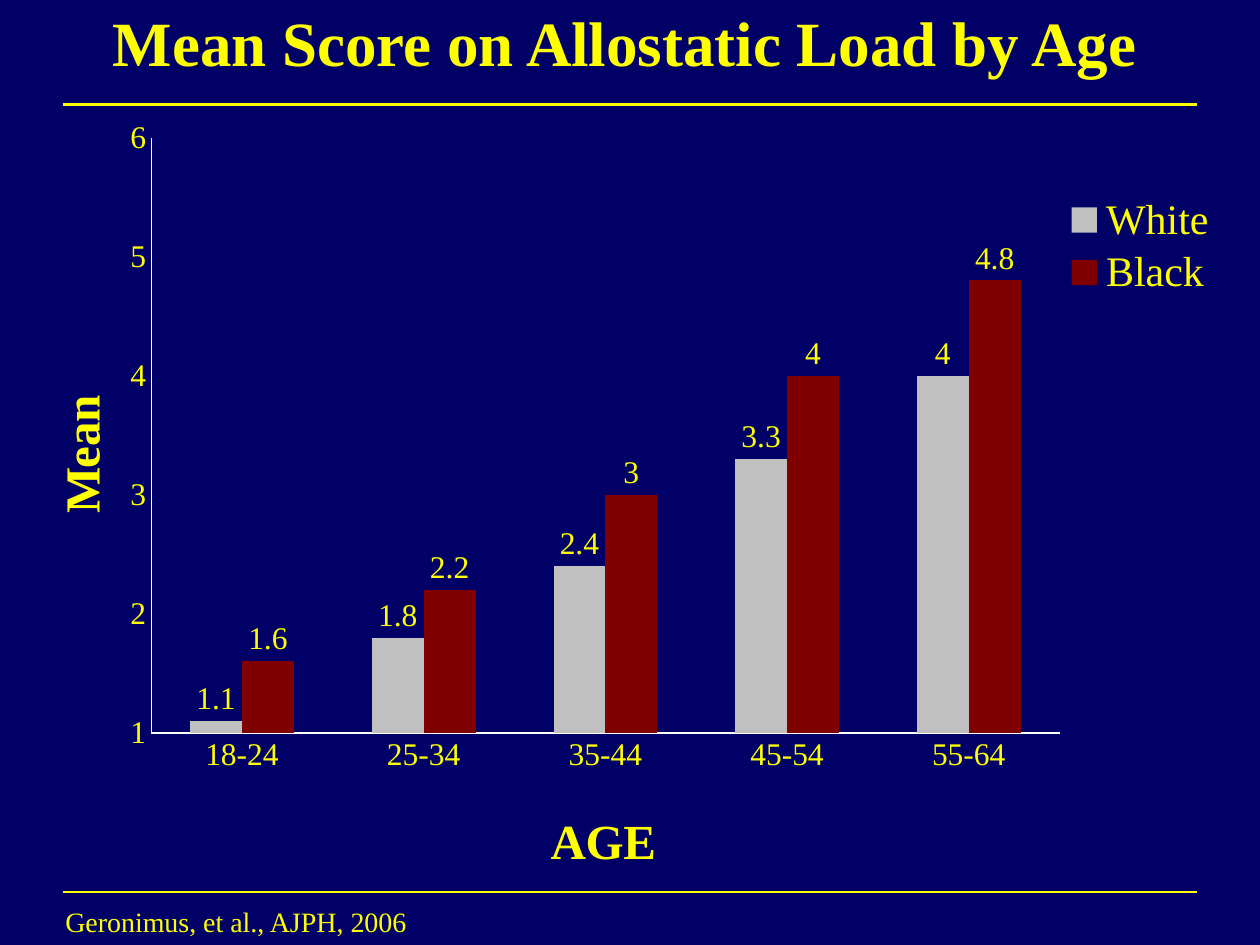
from dataclasses import dataclass

from lxml.etree import SubElement
from pptx import Presentation
from pptx.chart.data import CategoryChartData
from pptx.dml.color import RGBColor as Rgb
from pptx.enum.chart import XL_CHART_TYPE as ChartType
from pptx.enum.chart import XL_LABEL_POSITION as LabelPos
from pptx.enum.chart import XL_LEGEND_POSITION as LegendPos
from pptx.enum.chart import XL_TICK_MARK as Tick
from pptx.enum.shapes import MSO_CONNECTOR as Connector
from pptx.enum.text import MSO_ANCHOR as Anchor
from pptx.enum.text import MSO_AUTO_SIZE as AutoSize
from pptx.enum.text import PP_ALIGN as Align
from pptx.oxml import parse_xml
from pptx.oxml.ns import nsdecls, qn
from pptx.util import Inches, Pt


@dataclass(frozen=True)
class Theme:
    """Colours, font and type sizes of the slide."""
    font: str = "Times New Roman"
    background: str = "000066"
    accent: str = "FFFF00"
    axis: str = "FFFFFF"
    white_bars: str = "C0C0C0"
    black_bars: str = "800000"
    title: int = 36
    axis_title: int = 28
    legend: int = 24
    label: int = 18
    source: int = 16


def apply(target, values):
    """Set every attribute named in values on the target."""
    for name, value in values.items():
        setattr(target, name, value)


def place(part, after, **fractions):
    """Give a chart part a manual layout in fractions of the chart."""
    for old in part.findall(qn("c:layout")):
        part.remove(old)
    layout = parse_xml(f"<c:layout {nsdecls('c')}/>")
    manual = SubElement(layout, qn("c:manualLayout"))
    if after is None:
        SubElement(manual, qn("c:layoutTarget")).set("val", "inner")
        part.insert(0, layout)
    else:
        part.find(qn(after)).addnext(layout)
    for edge in ("x", "y"):
        SubElement(manual, qn(f"c:{edge}Mode")).set("val", "edge")
    for name, value in fractions.items():
        SubElement(manual, qn(f"c:{name}")).set("val", str(value))


class SlideBuilder:
    """Holds the theme and the current slide."""

    def __init__(self, slide, theme):
        self.slide = slide
        self.theme = theme
        fill = slide.background.fill
        fill.solid()
        fill.fore_color.rgb = Rgb.from_string(theme.background)

    def style(self, font, size, bold=False):
        apply(font, {"name": self.theme.font, "size": Pt(size), "bold": bold})
        font.color.rgb = Rgb.from_string(self.theme.accent)

    def title(self, text, left, top, width, height):
        heading = self.slide.shapes.title
        apply(heading, {"left": Inches(left), "top": Inches(top),
                        "width": Inches(width), "height": Inches(height)})
        frame = heading.text_frame
        apply(frame, {"text": text, "vertical_anchor": Anchor.MIDDLE,
                      "word_wrap": True, "auto_size": AutoSize.NONE})
        paragraph = frame.paragraphs[0]
        apply(paragraph, {"alignment": Align.CENTER, "line_spacing": Pt(25),
                          "space_before": Pt(0)})
        self.style(paragraph.runs[0].font, self.theme.title, True)

    def source(self, text, left, top, width, height):
        box = self.slide.shapes.add_textbox(
            Inches(left), Inches(top), Inches(width), Inches(height))
        apply(box.text_frame, {"text": text, "word_wrap": True,
                               "auto_size": AutoSize.SHAPE_TO_FIT_TEXT})
        self.style(box.text_frame.paragraphs[0].runs[0].font, self.theme.source)

    def rule(self, left, right, y, weight):
        line = self.slide.shapes.add_connector(
            Connector.STRAIGHT, Inches(left), Inches(y), Inches(right), Inches(y))
        line.line.color.rgb = Rgb.from_string(self.theme.accent)
        line.line.width = Pt(weight)
        SubElement(line._element.spPr, qn("a:effectLst"))

    def axis(self, axis, caption, x, y):
        apply(axis, {"has_major_gridlines": False, "major_tick_mark": Tick.NONE,
                     "minor_tick_mark": Tick.NONE})
        self.style(axis.tick_labels.font, self.theme.label)
        axis.format.line.color.rgb = Rgb.from_string(self.theme.axis)
        axis.format.line.width = Pt(0.75)
        frame = axis.axis_title.text_frame
        frame.text = caption
        self.style(frame.paragraphs[0].runs[0].font, self.theme.axis_title, True)
        place(axis.axis_title._element, "c:tx", x=x, y=y)

    def columns(self, ages, scores, colours, left, top, width, height):
        data = CategoryChartData()
        data.categories = ages
        for group, means in scores.items():
            data.add_series(group, means)
        chart = self.slide.shapes.add_chart(
            ChartType.COLUMN_CLUSTERED, Inches(left), Inches(top),
            Inches(width), Inches(height), data).chart
        apply(chart, {"has_title": False, "has_legend": True})
        self.style(chart.font, self.theme.label)
        apply(chart.legend, {"position": LegendPos.RIGHT, "include_in_layout": False})
        self.style(chart.legend.font, self.theme.legend)
        place(chart.legend._element, "c:legendPos", x=0.84, y=0.11, w=0.13, h=0.14)
        place(chart._chartSpace.chart.plotArea, None, x=0.12, y=0.042, w=0.721, h=0.756)

        self.axis(chart.category_axis, "AGE", 0.43, 0.885)
        self.axis(chart.value_axis, "Mean", 0.033, 0.358)
        apply(chart.value_axis, {"minimum_scale": 1, "maximum_scale": 6, "major_unit": 1})

        plot = chart.plots[0]
        apply(plot, {"gap_width": 150, "overlap": 0, "vary_by_categories": False,
                     "has_data_labels": True})
        apply(plot.data_labels, {"show_value": True, "position": LabelPos.OUTSIDE_END})
        self.style(plot.data_labels.font, self.theme.label)
        for series, colour in zip(plot.series, colours):
            series.invert_if_negative = False
            series.format.fill.solid()
            series.format.fill.fore_color.rgb = Rgb.from_string(colour)


def main():
    deck = Presentation()
    apply(deck, {"slide_width": Inches(10), "slide_height": Inches(7.5)})
    theme = Theme()
    builder = SlideBuilder(deck.slides.add_slide(deck.slide_layouts[5]), theme)
    ages = ["18-24", "25-34", "35-44", "45-54", "55-64"]
    scores = {"White": [1.1, 1.8, 2.4, 3.3, 4], "Black": [1.6, 2.2, 3, 4, 4.8]}
    builder.columns(ages, scores, [theme.white_bars, theme.black_bars],
                    0, 0.83, 10, 6.25)
    for y, weight in ((7.08, 1), (0.83, 1.5)):
        builder.rule(0.5, 9.5, y, weight)
    builder.source("Geronimus, et al., AJPH, 2006", 0.42, 7.13, 8, 0.37)
    builder.title("Mean Score on Allostatic Load by Age", 0.17, -0.17, 9.58, 1.25)
    deck.save("out.pptx")


if __name__ == "__main__":
    main()
